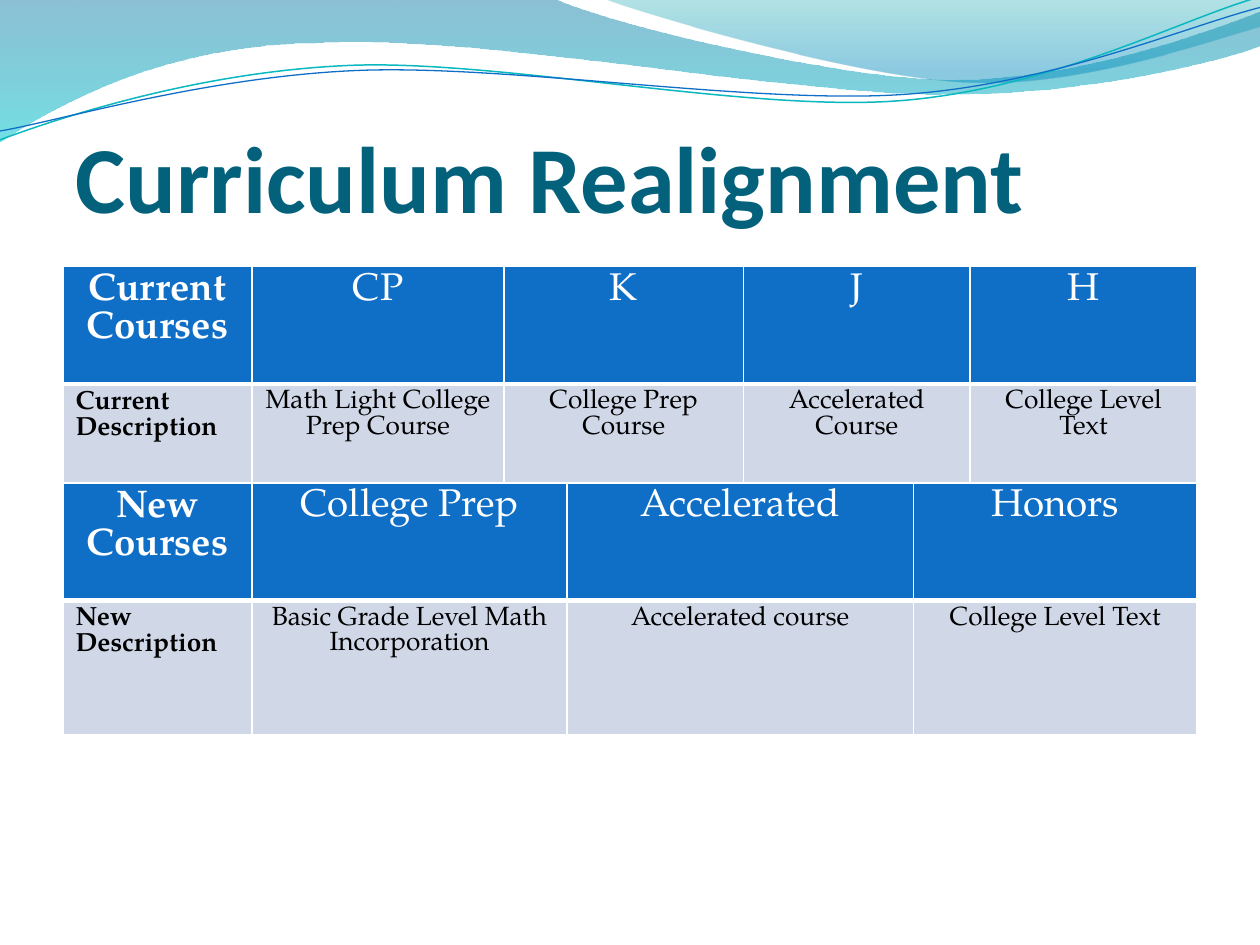
import math
import pptx
import pptx.util
import pptx.dml.color
import pptx.enum.text
import pptx.oxml.ns
import lxml.etree

Pt = pptx.util.Pt
RGB = pptx.dml.color.RGBColor.from_string
qn = pptx.oxml.ns.qn
ALIGN = pptx.enum.text.PP_ALIGN

THEME = {
    "title_font": "Calibri", "body_font": "TeX Gyre Pagella",
    "title_size": 54, "head_size": 22, "body_size": 15,
    "head_spacing": 21.6, "body_spacing": 14.8,
    "title": "04617B", "head": "0F6FC6", "band": "D0D8E8",
    "light": "FFFFFF", "dark": "000000",
    "back_wave": [(0, "0074A1", 45), (1, "00C6CF", 55)],
    "front_wave": [(0, "00A1A9", 30), (0.8, "008BBF", 45)],
    "teal_line": "0AB8BF", "blue_line": "0F6FC6",
}

TITLE = "Curriculum Realignment"

TABLES = [
    {"top": 152.4, "cols": [108, 144, 136.8, 129.6, 129.6], "rows": [
        ["Current Courses", "CP", "K", "J", "H"],
        ["Current Description", "Math Light College Prep Course",
         "College Prep Course", "Accelerated Course", "College Level Text"]]},
    {"top": 276, "cols": [108, 180, 198, 162], "rows": [
        ["New Courses", "College Prep", "Accelerated", "Honors"],
        ["New Description", "Basic Grade Level Math Incorporation",
         "Accelerated course", "College Level Text"]]},
]
TABLE_LEFT = 36
ROW_HEIGHTS = [67, 77]

WAVES = [
    ("back_wave", [
        [(0, -0.7)], [(316.8, -0.7)],
        [(342.7, 12.2), (478.1, 45.4), (545.8, 45.4)],
        [(614.2, 45.4), (689.8, 18.7), (720, 6.5)], [(720.7, 25.9)],
        [(707.8, 31.7), (626.4, 54.7), (537.1, 54)],
        [(447.8, 54), (275, 20.2), (185, 24.5)],
        [(92.9, 25.2), (33.1, 59.8), (-0.7, 81.4)]]),
    ("front_wave", [
        [(344.9, -0.7)],
        [(366.5, 7.9), (491, 44.6), (553.7, 46.8)],
        [(616.3, 49.7), (691.9, 23), (720, 15.1)], [(720, 0)]]),
]
LINES = [
    ("teal_line", 0.85, (359.3, 41.4), [
        [(0, 79.9)],
        [(34.6, 67), (113.8, 41), (199.4, 37.4)],
        [(284.4, 33.8), (427, 64.1), (513.4, 57.6)],
        [(599.8, 51.1), (675.4, 10.8), (718.6, -1.4)]]),
    ("blue_line", 0.75, (359.6, 42.5), [
        [(0, 74.9)],
        [(33.8, 69.1), (118.1, 43.9), (203.8, 40.3)],
        [(290.2, 36.7), (429.8, 59.8), (516.2, 54)],
        [(601.9, 48.2), (677.5, 15.1), (720, 4.3)]]),
]
LINE_TILT = -2.7


def turn(point, center, degrees):
    a = math.radians(degrees)
    dx, dy = point[0] - center[0], point[1] - center[1]
    return (center[0] + dx * math.cos(a) - dy * math.sin(a),
            center[1] + dx * math.sin(a) + dy * math.cos(a))


def add_outline(s, segments, close):
    points = [(Pt(x), Pt(y)) for seg in segments for x, y in seg]
    fb = s.shapes.build_freeform(*points[0])
    fb.add_line_segments(points[1:], close=close)
    sp = fb.convert_to_shape()
    sp.shadow.inherit = False
    nodes = iter(list(next(sp.element.iter(qn("a:path")))))
    for seg in segments:
        parts = [next(nodes) for _ in seg]
        if len(seg) == 3:
            curve = lxml.etree.Element(qn("a:cubicBezTo"))
            parts[0].addprevious(curve)
            for part in parts:
                curve.append(part[0])
                part.getparent().remove(part)
    return sp


def add_wave(s, name, segments):
    sp = add_outline(s, segments, True)
    sp.fill.gradient()
    sp.fill.gradient_angle = 270
    stops = THEME[name]
    for stop, (pos, color, _) in zip(sp.fill.gradient_stops, stops):
        stop.position = pos
        stop.color.rgb = RGB(color)
    for clr, (_, _, alpha) in zip(sp.element.spPr.iter(qn("a:srgbClr")), stops):
        lxml.etree.SubElement(clr, qn("a:alpha"), val=str(alpha * 1000))
    sp.line.fill.background()


def add_line(s, name, width, center, segments):
    level = [[turn(pt, center, -LINE_TILT) for pt in seg] for seg in segments]
    sp = add_outline(s, level, False)
    sp.rotation = LINE_TILT
    sp.fill.background()
    sp.line.color.rgb = RGB(THEME[name])
    sp.line.width = Pt(width)


def format_paragraph(p, font, size, color, bold, align):
    p.alignment = align
    for r in p.runs:
        r.font.name = font
        r.font.size = Pt(size)
        r.font.bold = bold
        r.font.color.rgb = RGB(color)


def set_borders(cell, widths):
    tcPr = cell._tc.get_or_add_tcPr()
    for side, width in widths.items():
        ln = lxml.etree.SubElement(tcPr, qn("a:ln" + side), w=str(Pt(width)))
        fill = lxml.etree.SubElement(ln, qn("a:solidFill"))
        lxml.etree.SubElement(fill, qn("a:srgbClr"), val=THEME["light"])


def add_courses(s, top, cols, rows):
    frame = s.shapes.add_table(len(rows), len(cols), Pt(TABLE_LEFT), Pt(top),
                               Pt(sum(cols)), Pt(sum(ROW_HEIGHTS)))
    table = frame.table
    table.first_row = table.horz_banding = False
    for col, width in zip(table.columns, cols):
        col.width = Pt(width)
    for i, (row, texts) in enumerate(zip(table.rows, rows)):
        head = i == 0
        kind = "head" if head else "body"
        row.height = Pt(ROW_HEIGHTS[i])
        for j, (cell, text) in enumerate(zip(row.cells, texts)):
            set_borders(cell, {"L": 1, "R": 1, "T": 1 if head else 3, "B": 3 if head else 1})
            cell.fill.solid()
            cell.fill.fore_color.rgb = RGB(THEME["head" if head else "band"])
            cell.text_frame.text = text
            p = cell.text_frame.paragraphs[0]
            p.line_spacing = Pt(THEME[kind + "_spacing"])
            format_paragraph(p, THEME["body_font"], THEME[kind + "_size"],
                             THEME["light" if head else "dark"], j == 0,
                             ALIGN.CENTER if head or j else ALIGN.LEFT)


def add_title(s):
    sp = s.shapes.title
    sp.left, sp.top, sp.width, sp.height = Pt(36), Pt(55.5), Pt(648), Pt(90)
    tf = sp.text_frame
    tf.text = TITLE
    tf.word_wrap = True
    tf.auto_size = pptx.enum.text.MSO_AUTO_SIZE.NONE
    tf.vertical_anchor = pptx.enum.text.MSO_ANCHOR.MIDDLE
    format_paragraph(tf.paragraphs[0], THEME["title_font"], THEME["title_size"],
                     THEME["title"], True, ALIGN.LEFT)


def main():
    prs = pptx.Presentation()
    prs.slide_width, prs.slide_height = Pt(720), Pt(540)
    s = prs.slides.add_slide(prs.slide_layouts[5])
    for wave in WAVES:
        add_wave(s, *wave)
    for line in LINES:
        add_line(s, *line)
    add_title(s)
    for courses in TABLES:
        add_courses(s, **courses)
    prs.save("out.pptx")


if __name__ == "__main__":
    main()
